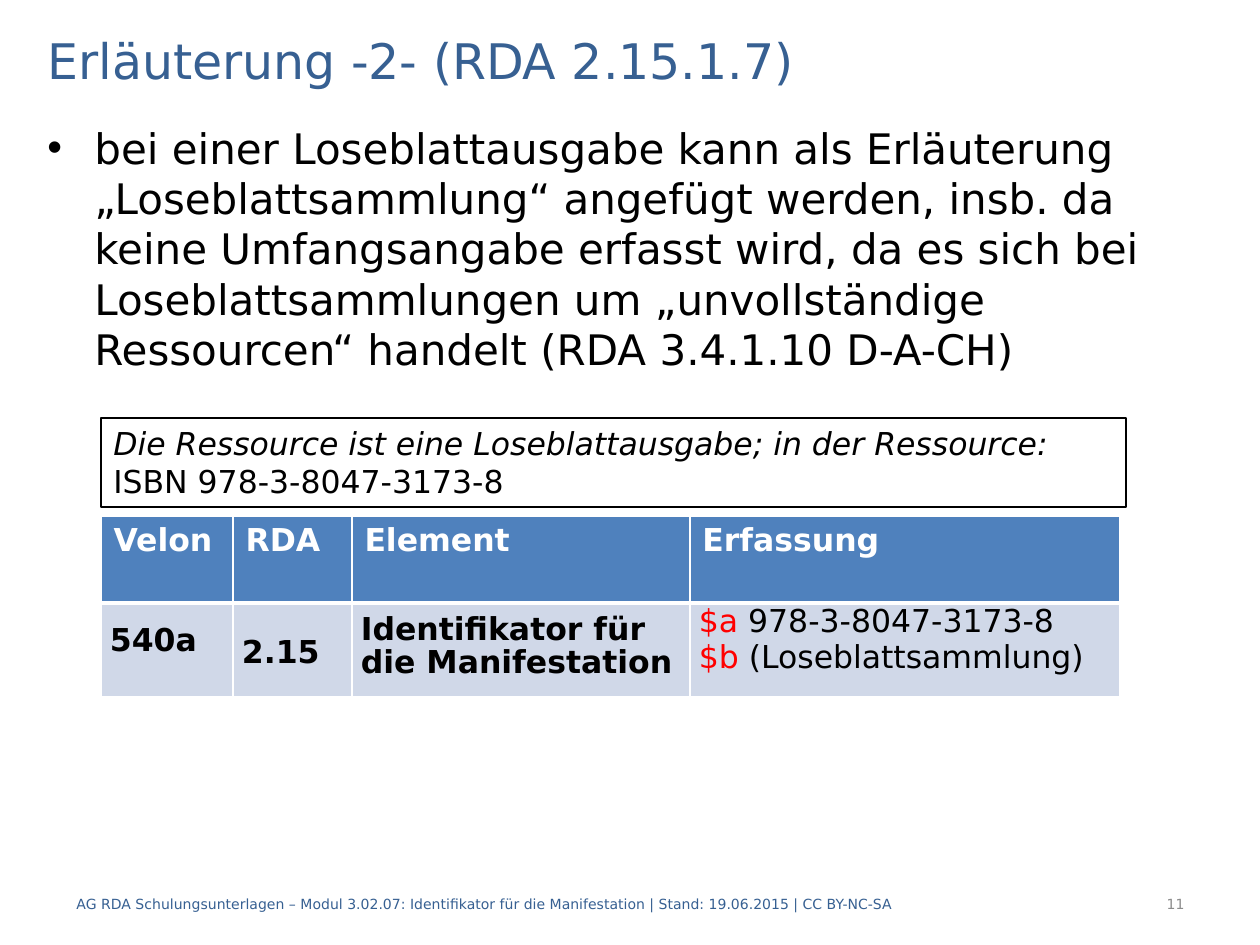
from lxml import etree
from pptx import Presentation
from pptx.dml.color import RGBColor
from pptx.enum.shapes import MSO_SHAPE
from pptx.enum.text import MSO_ANCHOR, PP_ALIGN
from pptx.oxml.ns import qn
from pptx.util import Pt

PX = 914400 // 126
FONT = "DejaVu Sans"
TOP, MIDDLE = MSO_ANCHOR.TOP, MSO_ANCHOR.MIDDLE
LEFT, RIGHT = PP_ALIGN.LEFT, PP_ALIGN.RIGHT
RECTANGLE = MSO_SHAPE.RECTANGLE

BLACK, WHITE, RED = "000000", "FFFFFF", "FF0000"
NAVY, GRAY = "376092", "8C8C8C"
HEADER_FILL, BODY_FILL = "4F81BD", "D0D8E8"

COLUMN_WIDTHS = [132, 119, 338, 430]
ROW_HEIGHTS = [87, 94]
HEADERS = ["Velon", "RDA", "Element", "Erfassung"]
LABELS = [
    (["540a"], 33),
    (["2.15"], 45),
    (["Identifikator für", "die Manifestation"], 22),
]
ENTRIES = [("$a", " 978-3-8047-3173-8"), ("$b", " (Loseblattsammlung)")]


def px(*lengths):
    return [length * PX for length in lengths]


def color(value):
    return RGBColor.from_string(value)


def apply(target, values):
    for name, value in values.items():
        setattr(target, name, value)


def add_run(paragraph, text, size, fill, **styles):
    run = paragraph.add_run()
    run.text = text
    apply(run.font, {"name": FONT, "size": Pt(size), **styles})
    run.font.color.rgb = color(fill)


def add_text(slide, box, text, size, fill, anchor=TOP, align=LEFT):
    frame = slide.shapes.add_textbox(*px(*box)).text_frame
    apply(frame, {"word_wrap": True, "vertical_anchor": anchor})
    paragraph = frame.paragraphs[0]
    paragraph.alignment = align
    add_run(paragraph, text, size, fill)
    return paragraph


def add_bullet(paragraph, indent):
    properties = paragraph._p.get_or_add_pPr()
    properties.set("marL", str(indent * PX))
    properties.set("indent", str(-indent * PX))
    etree.SubElement(properties, qn("a:buFont")).set("typeface", "Arial")
    etree.SubElement(properties, qn("a:buChar")).set("char", "•")


def add_example_box(slide, box, lines):
    shape = slide.shapes.add_shape(RECTANGLE, *px(*box))
    shape.shadow.inherit = False
    shape.fill.background()
    shape.line.color.rgb = color(BLACK)
    shape.line.width = Pt(0.75)
    frame = shape.text_frame
    apply(frame, {"word_wrap": True, "vertical_anchor": TOP})
    for index, (text, italic) in enumerate(lines):
        paragraph = frame.add_paragraph() if index else frame.paragraphs[0]
        paragraph.alignment = LEFT
        add_run(paragraph, text, 18, BLACK, italic=italic)


def style_cell(cell, fill, border_widths):
    properties = cell._tc.get_or_add_tcPr()
    for side, width in border_widths.items():
        line = etree.SubElement(properties, qn(f"a:ln{side}"), w=str(Pt(width)))
        solid = etree.SubElement(line, qn("a:solidFill"))
        etree.SubElement(solid, qn("a:srgbClr")).set("val", WHITE)
    cell.fill.solid()
    cell.fill.fore_color.rgb = color(fill)


def set_margins(cell, top):
    apply(cell, {
        "margin_left": 9 * PX, "margin_right": 9 * PX,
        "margin_top": top * PX, "margin_bottom": 0,
    })


def fill_label(cell, lines, top):
    set_margins(cell, top)
    for index, text in enumerate(lines):
        frame = cell.text_frame
        paragraph = frame.add_paragraph() if index else frame.paragraphs[0]
        apply(paragraph, {"line_spacing": Pt(13), "space_after": Pt(6)})
        add_run(paragraph, text, 18, BLACK, bold=True)


def fill_entries(cell, entries):
    set_margins(cell, 0)
    paragraph = cell.text_frame.paragraphs[0]
    paragraph.space_after = Pt(6)
    for index, (code, value) in enumerate(entries):
        if index:
            paragraph.add_line_break()
        add_run(paragraph, code, 18, RED, bold=False)
        add_run(paragraph, value, 18, BLACK, bold=False)


def add_identifier_table(slide, left, top):
    box = px(left, top, sum(COLUMN_WIDTHS), sum(ROW_HEIGHTS))
    table = slide.shapes.add_table(2, len(HEADERS), *box).table
    for column, width in zip(table.columns, COLUMN_WIDTHS):
        column.width = width * PX
    for row, height in zip(table.rows, ROW_HEIGHTS):
        row.height = height * PX
    for index, header in enumerate(HEADERS):
        cell = table.cell(0, index)
        style_cell(cell, HEADER_FILL, {"L": 1, "R": 1, "T": 1, "B": 3})
        add_run(cell.text_frame.paragraphs[0], header, 18, WHITE, bold=True)
        style_cell(table.cell(1, index), BODY_FILL, {"L": 1, "R": 1, "T": 3, "B": 1})
    for index, (lines, offset) in enumerate(LABELS):
        fill_label(table.cell(1, index), lines, offset)
    fill_entries(table.cell(1, len(LABELS)), ENTRIES)


def main():
    presentation = Presentation()
    presentation.slide_width, presentation.slide_height = px(1260, 945)
    slide = presentation.slides.add_slide(presentation.slide_layouts[6])

    add_text(slide, (35, 24, 1191, 71), "Erläuterung -2- (RDA 2.15.1.7)", 28, NAVY, MIDDLE)
    explanation = add_text(
        slide, (35, 116, 1191, 753),
        "bei einer Loseblattausgabe kann als Erläuterung „Loseblattsammlung“ "
        "angefügt werden, insb. da keine Umfangsangabe erfasst wird, da es sich bei "
        "Loseblattsammlungen um „unvollständige Ressourcen“ handelt "
        "(RDA 3.4.1.10 D-A-CH)", 24, BLACK)
    add_bullet(explanation, 47)
    add_text(
        slide, (64, 879, 1091, 49),
        "AG RDA Schulungsunterlagen – Modul 3.02.07: Identifikator für die "
        "Manifestation | Stand: 19.06.2015 | CC BY-NC-SA", 8, NAVY, MIDDLE)
    add_text(slide, (997, 879, 200, 50), "11", 8, GRAY, MIDDLE, RIGHT)
    add_identifier_table(slide, 101, 516)
    add_example_box(slide, (101, 418, 1025, 89), [
        ("Die Ressource ist eine Loseblattausgabe; in der Ressource:", True),
        ("ISBN 978-3-8047-3173-8", False),
    ])
    presentation.save("out.pptx")


if __name__ == "__main__":
    main()
